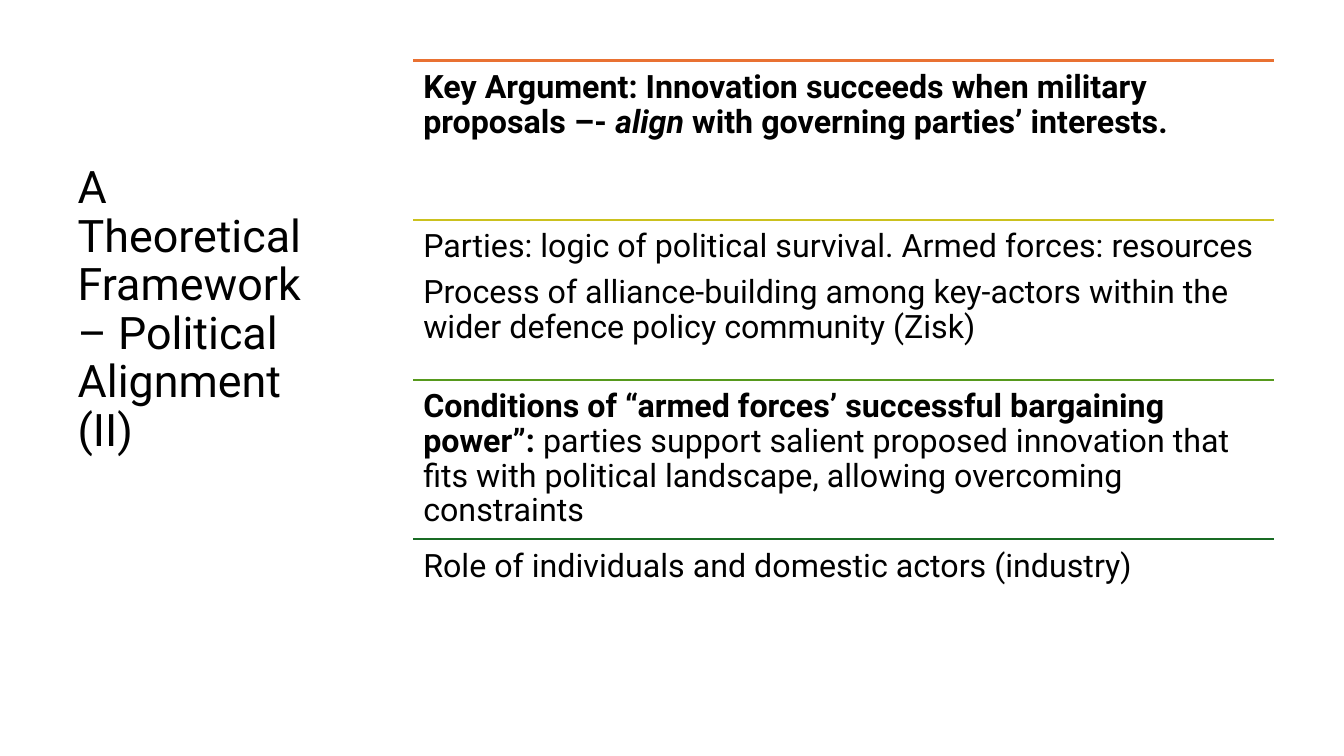
import pptx
import pptx.util
import pptx.dml.color
import pptx.enum.shapes
import pptx.enum.text
import lxml.etree
from pptx.util import Inches


def color(hex_code):
    return pptx.dml.color.RGBColor.from_string(hex_code)


def add_text(para, text, size=23, bold=False, italic=False):
    para.alignment = pptx.enum.text.PP_ALIGN.LEFT
    para.line_spacing = 0.9
    span = para.add_run()
    span.text = text
    span.font.name = "Roboto"
    span.font.size = pptx.util.Pt(size)
    span.font.bold = bold
    span.font.italic = italic
    span.font.color.rgb = color("000000")


deck = pptx.Presentation()
deck.slide_width = Inches(13.33)
deck.slide_height = Inches(7.5)
page = deck.slides.add_slide(deck.slide_layouts[5])

title = page.shapes.title
title.left, title.top = Inches(0.67), Inches(0.6)
title.width, title.height = Inches(2.67), Inches(4.96)
title.text_frame.word_wrap = True
title.text_frame.auto_size = pptx.enum.text.MSO_AUTO_SIZE.NONE
title.text_frame.vertical_anchor = pptx.enum.text.MSO_ANCHOR.MIDDLE
add_text(title.text_frame.paragraphs[0],
         "A Theoretical Framework – Political Alignment (II)", size=32)

BOLD = {"bold": True}
PLAIN = {}
sections = [
    ("E97132", [[
        ("Key Argument: Innovation succeeds when military proposals –- ", BOLD),
        ("align", {"bold": True, "italic": True}),
        (" with governing parties’ interests.", BOLD),
    ]]),
    ("CBC11E", [
        [("Parties: logic of political survival. Armed forces: resources", PLAIN)],
        [("Process of alliance-building among key-actors within the wider "
          "defence policy community (Zisk)", PLAIN)],
    ]),
    ("56991D", [[
        ("Conditions of “armed forces’ successful bargaining power”: ", BOLD),
        ("parties support salient proposed innovation that fits with political "
         "landscape, allowing overcoming constraints", PLAIN),
    ]]),
    ("196B24", [[("Role of individuals and domestic actors (industry)", PLAIN)]]),
]

left, width = Inches(4.1), Inches(8.54)
row_height = Inches(1.58)
row_step = Inches(1.583)

for row, (line_color, paragraphs) in enumerate(sections):
    top = Inches(0.6) + row * row_step
    rule = page.shapes.add_connector(
        pptx.enum.shapes.MSO_CONNECTOR.STRAIGHT, left, top, left + width, top)
    rule.line.color.rgb = color(line_color)
    rule.line.width = pptx.util.Pt(1.5)
    lxml.etree.SubElement(rule.line._get_or_add_ln().getparent(),
                          pptx.oxml.ns.qn("a:effectLst"))

    box = page.shapes.add_textbox(left, top, width, row_height)
    frame = box.text_frame
    frame.word_wrap = True
    frame.margin_left = frame.margin_right = Inches(0.1)
    frame.margin_top = frame.margin_bottom = Inches(0.1)
    for index, spans in enumerate(paragraphs):
        para = frame.add_paragraph() if index else frame.paragraphs[0]
        para.space_after = pptx.util.Pt(8)
        for text, style in spans:
            add_text(para, text, **style)

deck.save("out.pptx")
